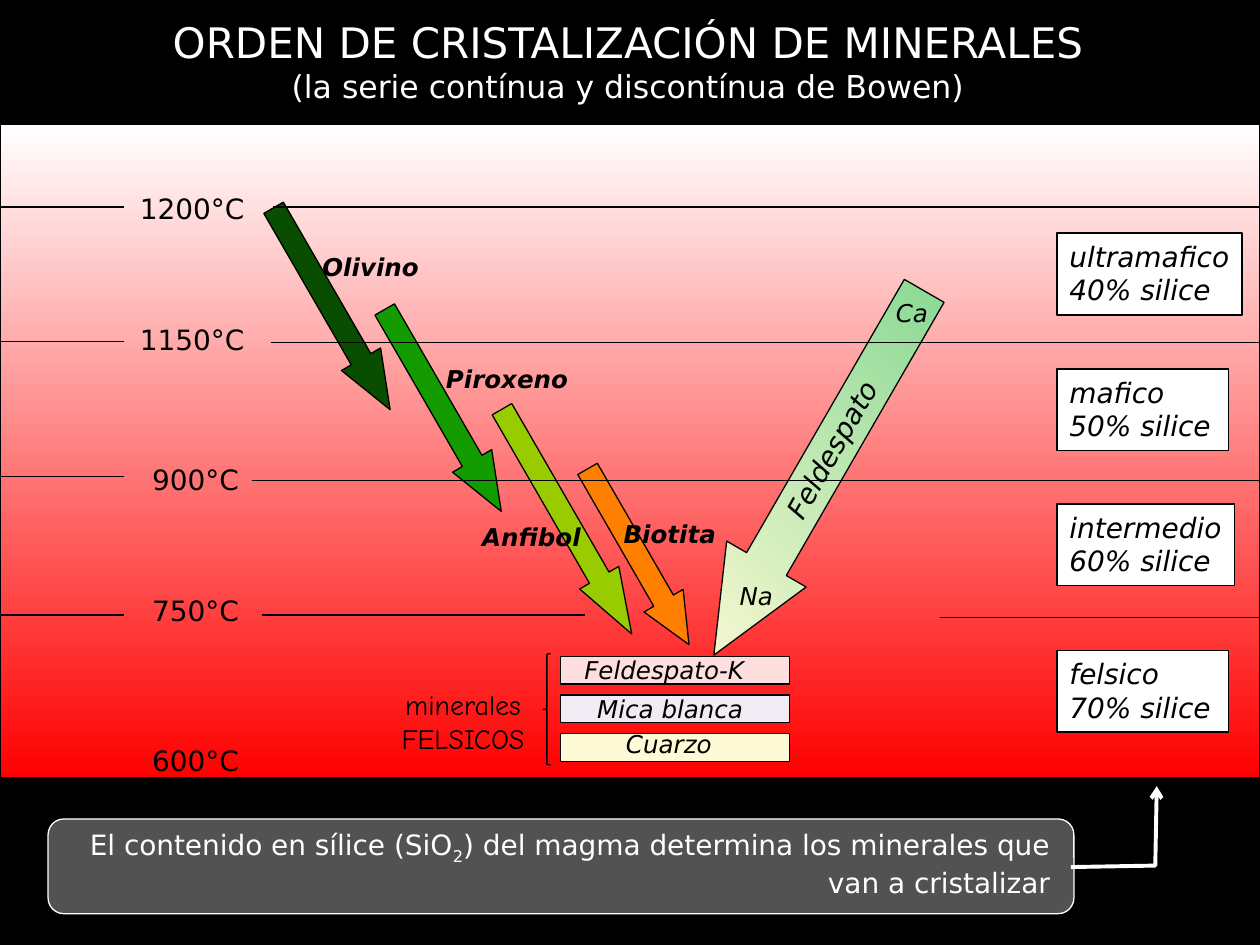
from dataclasses import dataclass

from lxml.etree import SubElement
from pptx import Presentation
from pptx.dml.color import RGBColor
from pptx.enum.shapes import MSO_CONNECTOR, MSO_SHAPE as SHAPE
from pptx.enum.text import MSO_ANCHOR, MSO_AUTO_SIZE, PP_ALIGN as ALIGN
from pptx.oxml.ns import qn
from pptx.util import Cm, Pt


@dataclass(frozen=True)
class Theme:
    font: str = "DejaVu Sans"
    hand_font: str = "Comic Neue"
    title: int = 24
    subtitle: int = 18
    body: int = 16
    label: int = 14
    thin: float = 0.75
    thick: float = 2.25
    black: str = "000000"
    white: str = "FFFFFF"
    hot: str = "FF0000"
    olivine: str = "084D00"
    pyroxene: str = "139B00"
    amphibole: str = "99CC00"
    biotite: str = "FF8000"
    calcic: str = "84D791"
    sodic: str = "FEFAD5"
    k_feldspar: str = "FEDFDD"
    mica: str = "F1ECF3"


T = Theme()
rgb = RGBColor.from_string


def add_shape(kind, at, fill=None, line=T.black, rot=0):
    """Add a preset shape; fill is a colour, a (from, to, angle) gradient or None."""
    sp = s.shapes.add_shape(kind, *map(Cm, at))
    sp.shadow.inherit = False
    sp.rotation = rot
    sp.line.color.rgb = rgb(line)
    sp.line.width = Pt(T.thin)
    if fill is None:
        sp.fill.background()
    elif isinstance(fill, str):
        sp.fill.solid()
        sp.fill.fore_color.rgb = rgb(fill)
    else:
        sp.fill.gradient()
        sp.fill.gradient_angle = fill[2]
        for stop, color in zip(sp.fill.gradient_stops, fill):
            stop.color.rgb = rgb(color)
        sp._element.spPr.find(qn("a:gradFill")).set("rotWithShape", "0")
    return sp


def write(sp, lines, size=T.body, color=T.black, font=T.font, bold=False,
          italic=False, align=ALIGN.LEFT, wrap=False):
    """Fill a shape with paragraphs, each given as a list of runs."""
    tf = sp.text_frame
    tf.word_wrap = wrap
    tf.auto_size = MSO_AUTO_SIZE.SHAPE_TO_FIT_TEXT
    tf.vertical_anchor = MSO_ANCHOR.TOP
    for i, runs in enumerate(lines):
        p = tf.add_paragraph() if i else tf.paragraphs[0]
        p.alignment = align
        for text in runs:
            r = p.add_run()
            r.text = text
            r.font.name = font
            r.font.size = Pt(size)
            r.font.bold = bold
            r.font.italic = italic
            r.font.color.rgb = rgb(color)
    return tf


prs = Presentation()
prs.slide_width, prs.slide_height = Cm(25.4), Cm(19.05)
s = prs.slides.add_slide(prs.slide_layouts[5])
s.background.fill.solid()
s.background.fill.fore_color.rgb = rgb(T.black)

# Title
title = s.shapes.title
title.left, title.top, title.width, title.height = map(Cm, (2.79, 0.2, 19.74, 2.06))
tf = write(title, [["ORDEN DE CRISTALIZACIÓN DE MINERALES"],
                   ["(la serie contínua y discontínua de Bowen)"]],
           T.title, T.white, align=ALIGN.CENTER)
tf.paragraphs[1].runs[0].font.size = Pt(T.subtitle)

# Magma and the panel of the note
add_shape(SHAPE.RECTANGLE, (0, 2.51, 25.4, 13.16), (T.hot, T.white, 90))
panel = add_shape(SHAPE.ROUNDED_RECTANGLE, (0.97, 16.51, 20.68, 1.91), T.white, T.white)
SubElement(panel._element.spPr.find(".//" + qn("a:srgbClr")), qn("a:alpha"), val="32000")

# Silica content of each magma
for name, percent, top, width in [
    ("ultramafico", 40, 4.7, 3.73),
    ("mafico", 50, 7.44, 3.45),
    ("intermedio", 60, 10.16, 3.58),
    ("felsico", 70, 13.11, 3.45),
]:
    sp = add_shape(SHAPE.RECTANGLE, (21.31, top, width, 1.65), T.white)
    write(sp, [[name], [f"{percent}% silice"]], italic=True)

# Felsic minerals
for i, fill in enumerate([T.k_feldspar, T.mica, T.sodic]):
    add_shape(SHAPE.RECTANGLE, (11.3, 13.23 + 0.78 * i, 4.62, 0.56), fill)

# Crystallization arrows; each head takes a quarter of the length
for left, top, length, thickness, rot, fill in [
    (4.34, 5.77, 4.7, 0.91, 60, T.olivine),
    (6.58, 7.82, 4.7, 0.91, 60, T.pyroxene),
    (8.81, 10.06, 5.23, 0.91, 60, T.amphibole),
    (10.82, 10.77, 4.09, 0.91, 60, T.biotite),
    (12.27, 8.61, 8.48, 1.85, 120, (T.sodic, T.calcic, 45)),
]:
    sp = add_shape(SHAPE.RIGHT_ARROW, (left, top, length, thickness), fill, rot=rot)
    sp.adjustments[1] = length / 4 / thickness

# Mineral labels
for text, left, top, width, bold, wrap in [
    ("Feldespato-K", 11.53, 13.08, 3.94, False, False),
    ("Mica blanca", 11.79, 13.87, 4.24, False, True),
    ("Cuarzo", 12.37, 14.58, 2.39, False, False),
    ("Ca", 17.81, 5.89, 1.3, False, False),
    ("Na", 14.66, 11.58, 1.78, False, True),
    ("Anfibol", 9.47, 10.39, 2.64, True, True),
    ("Piroxeno", 8.74, 7.21, 5, True, True),
    ("Olivino", 6.25, 4.95, 3, True, True),
    ("Biotita", 12.32, 10.34, 2.64, True, True),
]:
    sp = s.shapes.add_textbox(Cm(left), Cm(top), Cm(width), Cm(0.86))
    write(sp, [[text]], T.label, bold=bold, italic=True, wrap=wrap)

sp = s.shapes.add_textbox(Cm(14.88), Cm(8.59), Cm(3.76), Cm(0.94))
sp.rotation = 299.7
write(sp, [["Feldespato"]], italic=True, align=ALIGN.CENTER)

# Temperature scale
for degrees, left, top, width in [
    (1200, 2.57, 3.73, 2.64),
    (1150, 2.57, 6.38, 2.64),
    (900, 2.82, 9.19, 2.29),
    (750, 2.82, 11.84, 2.29),
    (600, 2.82, 14.86, 2.29),
]:
    sp = s.shapes.add_textbox(Cm(left), Cm(top), Cm(width), Cm(0.94))
    write(sp, [[f"{degrees}°C"]])

for start, end, y in [
    (0, 2.51, 4.17), (0, 2.51, 6.88), (0, 2.51, 9.6), (0, 2.51, 12.4),
    (5.51, 25.4, 4.17), (5.46, 25.4, 6.91), (5.08, 25.4, 9.68),
    (5.28, 11.79, 12.4), (18.95, 25.4, 12.45),
]:
    line = s.shapes.add_connector(MSO_CONNECTOR.STRAIGHT, Cm(start), Cm(y), Cm(end), Cm(y))
    line.line.color.rgb = rgb(T.black)
    line.line.width = Pt(T.thin)
    SubElement(line._element.spPr, qn("a:effectLst"))

# Brace around the felsic minerals
add_shape(SHAPE.LEFT_BRACE, (10.95, 13.18, 0.15, 2.24))
sp = s.shapes.add_textbox(Cm(7.14), Cm(13.74), Cm(4.39), Cm(1.63))
write(sp, [["minerales"], ["FELSICOS"]], font=T.hand_font, align=ALIGN.CENTER, wrap=True)

# Note on silica with its arrow
sp = s.shapes.add_textbox(Cm(1.02), Cm(16.56), Cm(20.4), Cm(1.63))
tf = write(sp, [["El contenido en sílice (SiO", "2",
                 ") del magma determina los minerales que van a cristalizar"]],
           color=T.white, align=ALIGN.RIGHT, wrap=True)
tf.paragraphs[0].runs[1]._r.get_or_add_rPr().set("baseline", "-25000")

builder = s.shapes.build_freeform(Cm(21.59), Cm(17.48))
builder.add_line_segments([(Cm(23.29), Cm(17.45)), (Cm(23.32), Cm(15.85))], close=False)
arrow = builder.convert_to_shape()
arrow.shadow.inherit = False
arrow.fill.background()
arrow.line.color.rgb = rgb(T.white)
arrow.line.width = Pt(T.thick)
SubElement(arrow.line._get_or_add_ln(), qn("a:tailEnd"), type="arrow")

prs.save("out.pptx")
